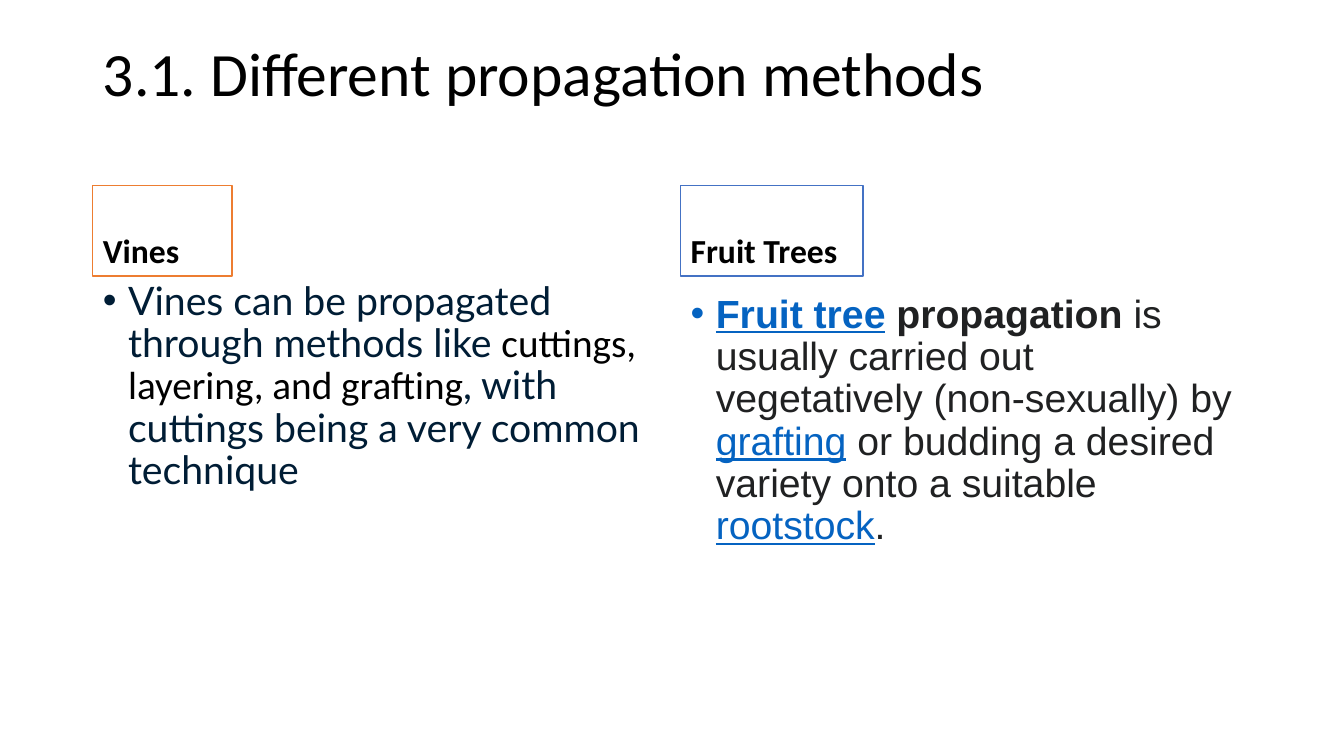
from pptx import Presentation
from pptx.dml.color import RGBColor
from pptx.enum import text
from pptx.oxml import xmlchemy
from pptx.util import Inches, Pt

BLACK = RGBColor(0x00, 0x00, 0x00)
WHITE = RGBColor(0xFF, 0xFF, 0xFF)
ORANGE = RGBColor(0xED, 0x7D, 0x31)
BLUE = RGBColor(0x44, 0x72, 0xC4)
NAVY = RGBColor(0x00, 0x1D, 0x35)
CHARCOAL = RGBColor(0x20, 0x21, 0x22)
LINK = RGBColor(0x05, 0x63, 0xC1)

VINES = [
    ("Vines can be propagated through methods like ", "Lato", NAVY, False, False),
    ("cuttings, layering, and grafting", "Calibri", BLACK, False, False),
    (", with cuttings being a very common technique", "Lato", NAVY, False, False),
]
FRUIT_TREES = [
    ("Fruit tree", "Arial", LINK, True, True),
    (" propagation", "Arial", CHARCOAL, True, False),
    (" is usually carried out vegetatively (non-sexually) by ", "Arial", CHARCOAL, False, False),
    ("grafting", "Arial", LINK, False, True),
    (" or budding a desired variety onto a suitable ", "Arial", CHARCOAL, False, False),
    ("rootstock", "Arial", LINK, False, True),
    (".", "Arial", CHARCOAL, False, False),
]


def place(holder, box, anchor):
    """Move a placeholder to its box and return its first paragraph."""
    holder.left, holder.top, holder.width, holder.height = map(Inches, box)
    frame = holder.text_frame
    frame.word_wrap = True
    frame.auto_size = text.MSO_AUTO_SIZE.NONE
    frame.vertical_anchor = anchor
    para = frame.paragraphs[0]
    para.alignment = text.PP_ALIGN.LEFT
    para.line_spacing = 0.9
    return para


def add_span(para, words, size, font, color, bold=False, underline=False):
    """Add one formatted run to a paragraph."""
    span = para.add_run()
    span.text = words
    span.font.size = Pt(size)
    span.font.name = font
    span.font.color.rgb = color
    span.font.bold = bold
    span.font.underline = underline


def add_title(holder, box, words):
    """Write the title with an empty second line below it."""
    para = place(holder, box, text.MSO_ANCHOR.MIDDLE)
    para.font.size = Pt(44)
    add_span(para, words, 44, "Calibri", BLACK)
    para.add_line_break()


def add_heading(holder, box, words, outline):
    """Write a column heading in an outlined box."""
    para = place(holder, box, text.MSO_ANCHOR.BOTTOM)
    para.space_before = Pt(10)
    holder.fill.solid()
    holder.fill.fore_color.rgb = WHITE
    holder.line.color.rgb = outline
    holder.line.width = Pt(1)
    add_span(para, words, 24, "Calibri", BLACK, bold=True)


def add_bullet(holder, box, spans):
    """Write one bulleted paragraph of mixed runs."""
    para = place(holder, box, text.MSO_ANCHOR.TOP)
    para.space_before = Pt(10)
    properties = para._p.get_or_add_pPr()
    properties.set("marL", str(Inches(0.25)))
    properties.set("indent", str(Inches(-0.25)))
    bullet = xmlchemy.OxmlElement("a:buChar")
    bullet.set("char", "•")
    properties.append(bullet)
    for words, font, color, bold, underline in spans:
        add_span(para, words, 28, font, color, bold, underline)


def build_comparison(deck):
    """Add the slide that compares vines with fruit trees."""
    page = deck.slides.add_slide(deck.slide_layouts[4])
    title, left_head, left_body, right_head, right_body = list(page.placeholders)[:5]
    add_title(title, (0.92, 0.4, 11.5, 1.45), "3.1. Different propagation methods")
    add_heading(left_head, (0.92, 1.84, 1.38, 0.9), "Vines", ORANGE)
    add_bullet(left_body, (0.92, 2.74, 5.64, 4.03), VINES)
    add_heading(right_head, (6.75, 1.84, 1.81, 0.9), "Fruit Trees", BLUE)
    add_bullet(right_body, (6.75, 2.87, 5.67, 4.03), FRUIT_TREES)


def main():
    """Build and save the deck."""
    deck = Presentation()
    deck.slide_width = Inches(13.33)
    deck.slide_height = Inches(7.5)
    build_comparison(deck)
    deck.save("out.pptx")


if __name__ == "__main__":
    main()
